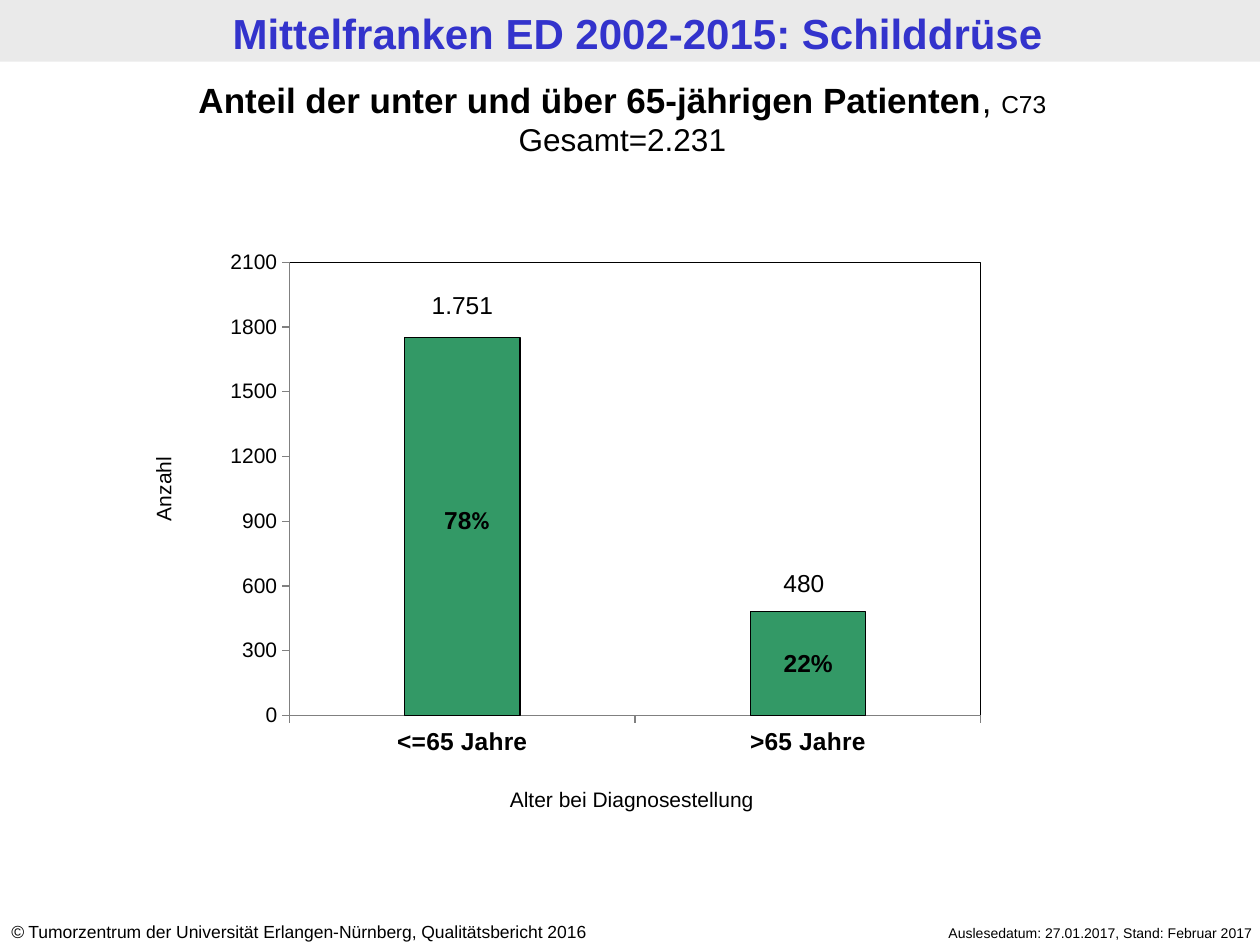
from lxml.etree import SubElement
from pptx import Presentation
from pptx.chart.data import CategoryChartData
from pptx.dml.color import RGBColor
from pptx.enum.chart import XL_CHART_TYPE, XL_TICK_MARK
from pptx.enum.shapes import MSO_SHAPE
from pptx.enum.text import MSO_ANCHOR, PP_ALIGN
from pptx.oxml import parse_xml
from pptx.oxml.ns import nsdecls, qn
from pptx.util import Inches, Pt

BLACK = RGBColor(0x00, 0x00, 0x00)
BLUE = RGBColor(0x33, 0x33, 0xCC)
GREEN = RGBColor(0x33, 0x99, 0x66)
BAND_GREY = RGBColor(0xEA, 0xEA, 0xEA)
AXIS_GREY = RGBColor(0x80, 0x80, 0x80)
LEFT, CENTER, RIGHT = PP_ALIGN.LEFT, PP_ALIGN.CENTER, PP_ALIGN.RIGHT

TITLE = "Mittelfranken ED 2002-2015: Schilddrüse"
AGE_GROUPS = [("<=65 Jahre", 1750), (">65 Jahre", 480)]
CHART_FRAME = (1.51, 1.42, 6.98, 4.66)
PLOT_AREA = {"x": 0.113, "y": 0.142, "w": 0.786, "h": 0.772}

# frame, alignment, rotation, paragraphs of (text, size, style)
TEXTS = [
    ((-0.01, 7.26, 5.24, 0.27), LEFT, 0, [
        [("©", 10, "italic"),
         (" Tumorzentrum der Universität Erlangen-Nürnberg, Qualitätsbericht 2016", 10, "")]]),
    ((6.65, 7.29, 3.39, 0.24), RIGHT, 0, [
        [("Auslesedatum: 27.01.2017, Stand: Februar 2017", 8, "")]]),
    ((0, 0.57, 9.88, 0.74), CENTER, 0, [
        [("Anteil der unter und über 65-jährigen Patienten", 20, "bold"),
         (", ", 20, ""), ("C73", 14, "")],
        [("Gesamt=2.231", 18, "")]]),
    ((3.27, 3.96, 0.87, 0.34), CENTER, 0, [[("78", 14, "bold"), ("%", 14, "bold Calibri")]]),
    ((5.94, 5.09, 0.95, 0.34), CENTER, 0, [[("22%", 14, "bold")]]),
    ((3.35, 6.19, 3.33, 0.3), CENTER, 0, [[("Alter bei Diagnosestellung", 12, "")]]),
    ((-0.01, 3.73, 2.61, 0.3), CENTER, 270, [[("Anzahl", 12, "")]]),
    ((3.16, 2.25, 1.02, 0.34), CENTER, 0, [[("1.751", 14, "")]]),
    ((5.87, 4.46, 1.02, 0.34), CENTER, 0, [[("480", 14, "")]]),
]


def inches(frame):
    return [Inches(length) for length in frame]


def add_span(para, text, size, style="", color=BLACK):
    span = para.add_run()
    span.text = text
    span.font.name = "Calibri" if "Calibri" in style else "Arial"
    span.font.size = Pt(size)
    span.font.bold = "bold" in style
    span.font.italic = "italic" in style
    span.font.color.rgb = color


def add_title(page):
    band = page.shapes.add_shape(MSO_SHAPE.RECTANGLE, *inches((0, 0, 10, 0.49)))
    band.shadow.inherit = False
    band.fill.solid()
    band.fill.fore_color.rgb = BAND_GREY
    band.line.fill.background()
    title = page.shapes.title
    title._element.addprevious(band._element)
    title.left, title.top, title.width, title.height = inches((0.06, 0.01, 10, 0.49))
    title.text_frame.vertical_anchor = MSO_ANCHOR.BOTTOM
    title.text_frame.margin_top = title.text_frame.margin_bottom = Inches(0.04)
    para = title.text_frame.paragraphs[0]
    para.alignment = CENTER
    add_span(para, TITLE, 24, "bold", BLUE)


def add_text(page, frame, alignment, rotation, paragraphs):
    box = page.shapes.add_textbox(*inches(frame))
    box.rotation = rotation
    box.text_frame.word_wrap = True
    for index, spans in enumerate(paragraphs):
        para = box.text_frame.add_paragraph() if index else box.text_frame.paragraphs[0]
        para.alignment = alignment
        for span in spans:
            add_span(para, *span)


def format_axis(axis, size, bold):
    axis.has_major_gridlines = False
    axis.major_tick_mark = XL_TICK_MARK.OUTSIDE
    axis.minor_tick_mark = XL_TICK_MARK.NONE
    axis.format.line.color.rgb = AXIS_GREY
    axis.format.line.width = Pt(0.75)
    font = axis.tick_labels.font
    font.name, font.size, font.bold = "Arial", Pt(size), bold
    font.color.rgb = BLACK


def format_plot_area(chart):
    area = chart._chartSpace.chart.plotArea
    for layout in area.findall(qn("c:layout")):
        area.remove(layout)
    layout = parse_xml(f"<c:layout {nsdecls('c')}><c:manualLayout/></c:layout>")
    values = {"layoutTarget": "inner", "xMode": "edge", "yMode": "edge", **PLOT_AREA}
    for name, value in values.items():
        SubElement(layout[0], qn(f"c:{name}")).set("val", str(value))
    area.insert(0, layout)
    area.append(parse_xml(
        f'<c:spPr {nsdecls("c", "a")}><a:noFill/><a:ln w="{Pt(0.75)}"><a:solidFill>'
        f'<a:srgbClr val="{BLACK}"/></a:solidFill></a:ln></c:spPr>'))


def add_age_chart(page):
    data = CategoryChartData()
    data.categories = [name for name, count in AGE_GROUPS]
    data.add_series("Series 1", [count for name, count in AGE_GROUPS])
    chart = page.shapes.add_chart(
        XL_CHART_TYPE.COLUMN_STACKED, *inches(CHART_FRAME), data).chart
    chart.has_legend = False
    chart.has_title = False
    chart.font.name, chart.font.size = "Calibri", Pt(18)
    chart.font.color.rgb = BLACK
    format_axis(chart.category_axis, 14, True)
    format_axis(chart.value_axis, 12, False)
    chart.value_axis.minimum_scale = 0
    chart.value_axis.maximum_scale = 2100
    chart.value_axis.major_unit = 300
    plot = chart.plots[0]
    plot.vary_by_categories = False
    plot.gap_width, plot.overlap = 200, 100
    columns = plot.series[0].format
    columns.fill.solid()
    columns.fill.fore_color.rgb = GREEN
    columns.line.color.rgb = BLACK
    columns.line.width = Pt(0.75)
    format_plot_area(chart)


def main():
    deck = Presentation()
    deck.slide_width, deck.slide_height = Inches(10), Inches(7.5)
    page = deck.slides.add_slide(deck.slide_layouts[5])
    add_title(page)
    add_age_chart(page)
    for text in TEXTS:
        add_text(page, *text)
    deck.save("out.pptx")


if __name__ == "__main__":
    main()
